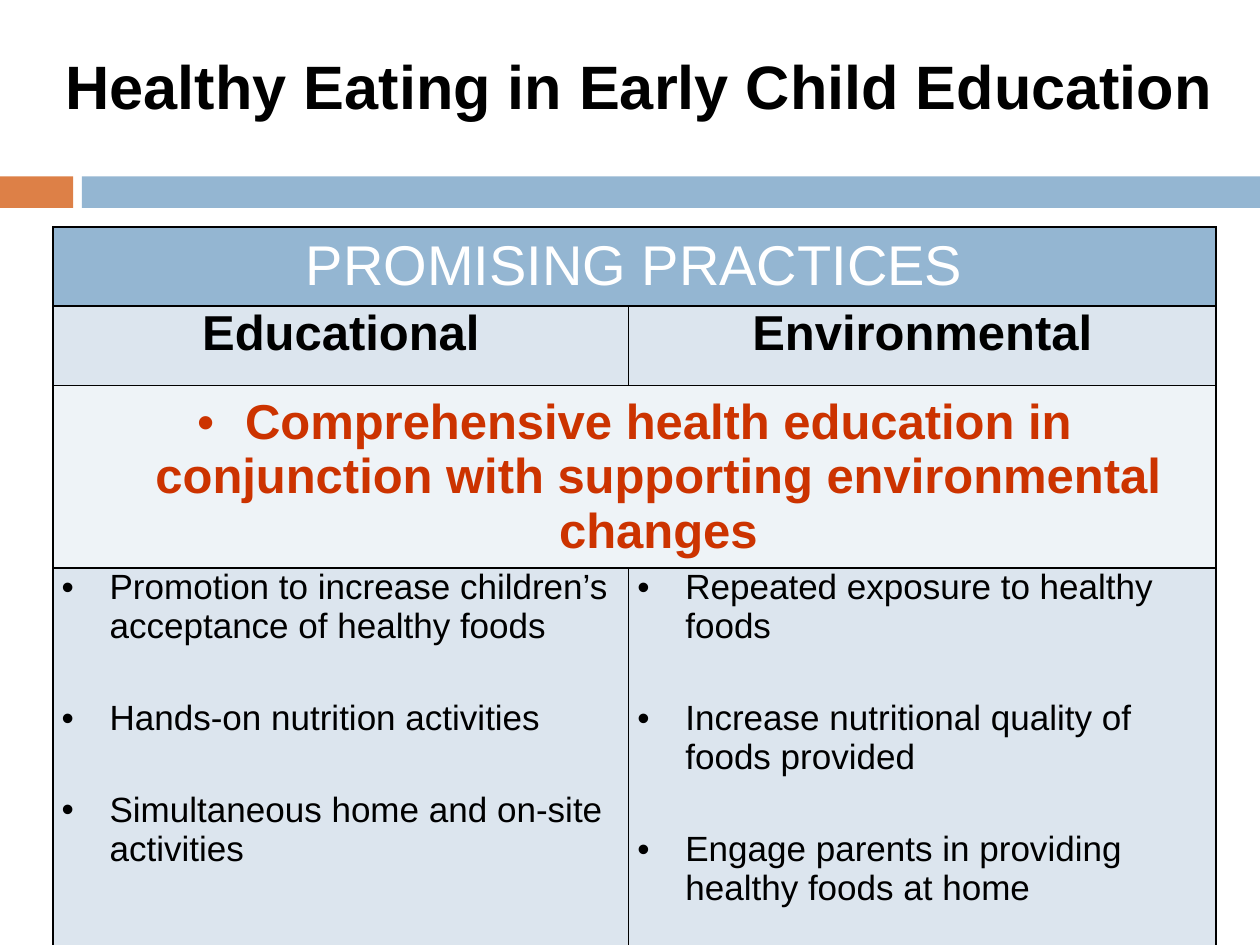
"""Build the slide on healthy eating practices in early child education."""
import lxml.etree
import pptx
import pptx.dml.color
import pptx.enum.shapes
import pptx.enum.text
import pptx.oxml.ns
import pptx.util

Inches = pptx.util.Inches
Pt = pptx.util.Pt
RGBColor = pptx.dml.color.RGBColor
ALIGN = pptx.enum.text.PP_ALIGN
ANCHOR = pptx.enum.text.MSO_ANCHOR
qn = pptx.oxml.ns.qn

ORANGE = RGBColor(0xDD, 0x80, 0x47)
BLUE = RGBColor(0x94, 0xB6, 0xD2)
PALE_BLUE = RGBColor(0xDC, 0xE5, 0xEE)
PALEST_BLUE = RGBColor(0xEE, 0xF3, 0xF7)
RED = RGBColor(0xCC, 0x33, 0x00)
BLACK = RGBColor(0, 0, 0)
WHITE = RGBColor(255, 255, 255)

TITLE = {"size": Pt(35), "bold": True, "color": BLACK}
BANNER = {"size": Pt(32), "bold": False, "color": WHITE}
HEADING = {"size": Pt(28), "bold": True, "color": BLACK}
KEY_POINT = {"size": Pt(28), "bold": True, "color": RED}
ITEM = {"size": Pt(20), "bold": False, "color": BLACK}

CELL_MARGINS = {
    "margin_left": Inches(0.07), "margin_right": Inches(0.07),
    "margin_top": 0, "margin_bottom": 0,
}
COLUMN_WIDTHS = (4.57, 4.66)
ROW_HEIGHTS = (0.63, 0.63, 1.45, 3)
EDUCATIONAL = (
    "Promotion to increase children’s acceptance of healthy foods",
    "Hands-on nutrition activities",
    "Simultaneous home and on-site activities",
)
ENVIRONMENTAL = (
    "Repeated exposure to healthy foods",
    "Increase nutritional quality of foods provided",
    "Engage parents in providing healthy foods at home",
)


def apply_values(target, values):
    """Set each named attribute on the target."""
    for name, value in values.items():
        setattr(target, name, value)


def write_span(para, text, style, align=ALIGN.LEFT):
    """Add one formatted run to an aligned paragraph."""
    para.alignment = align
    span = para.add_run()
    span.text = text
    apply_values(span.font, {"name": "Arial", "size": style["size"], "bold": style["bold"]})
    span.font.color.rgb = style["color"]


def add_bullet(para, space_after):
    """Give a paragraph a hanging bullet and spacing."""
    apply_values(para, {"space_before": Pt(2), "space_after": Pt(space_after)})
    properties = para._p.get_or_add_pPr()
    properties.set("marL", str(Inches(0.38)))
    properties.set("indent", str(Inches(-0.38)))
    lxml.etree.SubElement(properties, qn("a:buFont"), typeface="Arial")
    lxml.etree.SubElement(properties, qn("a:buChar"), char="•")


def add_bar(page, left, width, color):
    """Draw one block of the band under the title."""
    box = page.shapes.add_shape(
        pptx.enum.shapes.MSO_SHAPE.RECTANGLE,
        Inches(left), Inches(1.4), Inches(width), Inches(0.25))
    box.shadow.inherit = False
    box.fill.solid()
    box.fill.fore_color.rgb = color
    box.line.fill.background()


def add_title(page, text):
    """Place and fill the title placeholder."""
    box = page.shapes.title
    apply_values(box, {
        "left": Inches(0.42), "top": Inches(0.01),
        "width": Inches(9.44), "height": Inches(1.33),
    })
    box.text_frame.vertical_anchor = ANCHOR.MIDDLE
    write_span(box.text_frame.paragraphs[0], text, TITLE)


def format_cell(cell, color, anchor=ANCHOR.TOP):
    """Give a cell its black borders, fill, margins and anchor."""
    properties = cell._tc.get_or_add_tcPr()
    for side in ("lnL", "lnR", "lnT", "lnB"):
        line = lxml.etree.SubElement(properties, qn(f"a:{side}"), w=str(Pt(1)))
        fill = lxml.etree.SubElement(line, qn("a:solidFill"))
        lxml.etree.SubElement(fill, qn("a:srgbClr"), val=str(BLACK))
    cell.fill.solid()
    cell.fill.fore_color.rgb = color
    apply_values(cell, {**CELL_MARGINS, "vertical_anchor": anchor})


def write_list(cell, items):
    """Write well separated bulleted items into a cell."""
    frame = cell.text_frame
    for index, item in enumerate(items):
        para = frame.add_paragraph() if index else frame.paragraphs[0]
        write_span(para, item, ITEM)
        add_bullet(para, 28 if index < len(items) - 1 else 2)


def add_practices_table(page):
    """Build the table of promising practices."""
    table = page.shapes.add_table(
        len(ROW_HEIGHTS), len(COLUMN_WIDTHS), Inches(0.42), Inches(1.8),
        Inches(sum(COLUMN_WIDTHS)), Inches(sum(ROW_HEIGHTS))).table
    apply_values(table, {"first_row": False, "horz_banding": False})
    for column, width in zip(table.columns, COLUMN_WIDTHS):
        column.width = Inches(width)
    for row, height in zip(table.rows, ROW_HEIGHTS):
        row.height = Inches(height)

    row_formats = (
        (BLUE, ANCHOR.MIDDLE), (PALE_BLUE, ANCHOR.TOP),
        (PALEST_BLUE, ANCHOR.MIDDLE), (PALE_BLUE, ANCHOR.TOP),
    )
    for row, (color, anchor) in zip(table.rows, row_formats):
        for cell in row.cells:
            format_cell(cell, color, anchor)
    for index in (0, 2):
        table.cell(index, 0).merge(table.cell(index, 1))

    centred = (
        (0, 0, "PROMISING PRACTICES", BANNER),
        (1, 0, "Educational", HEADING),
        (1, 1, "Environmental", HEADING),
        (2, 0, "Comprehensive health education in conjunction with "
               "supporting environmental changes", KEY_POINT),
    )
    for row, column, text, style in centred:
        para = table.cell(row, column).text_frame.paragraphs[0]
        write_span(para, text, style, ALIGN.CENTER)
    add_bullet(table.cell(2, 0).text_frame.paragraphs[0], 2)
    for column, items in enumerate((EDUCATIONAL, ENVIRONMENTAL)):
        write_list(table.cell(3, column), items)


def main():
    """Create and save the deck."""
    deck = pptx.Presentation()
    apply_values(deck, {"slide_width": Inches(10), "slide_height": Inches(7.5)})
    page = deck.slides.add_slide(deck.slide_layouts[5])
    add_bar(page, 0, 0.58, ORANGE)
    add_bar(page, 0.65, 9.35, BLUE)
    add_title(page, "Healthy Eating in Early Child Education")
    add_practices_table(page)
    deck.save("out.pptx")


if __name__ == "__main__":
    main()
